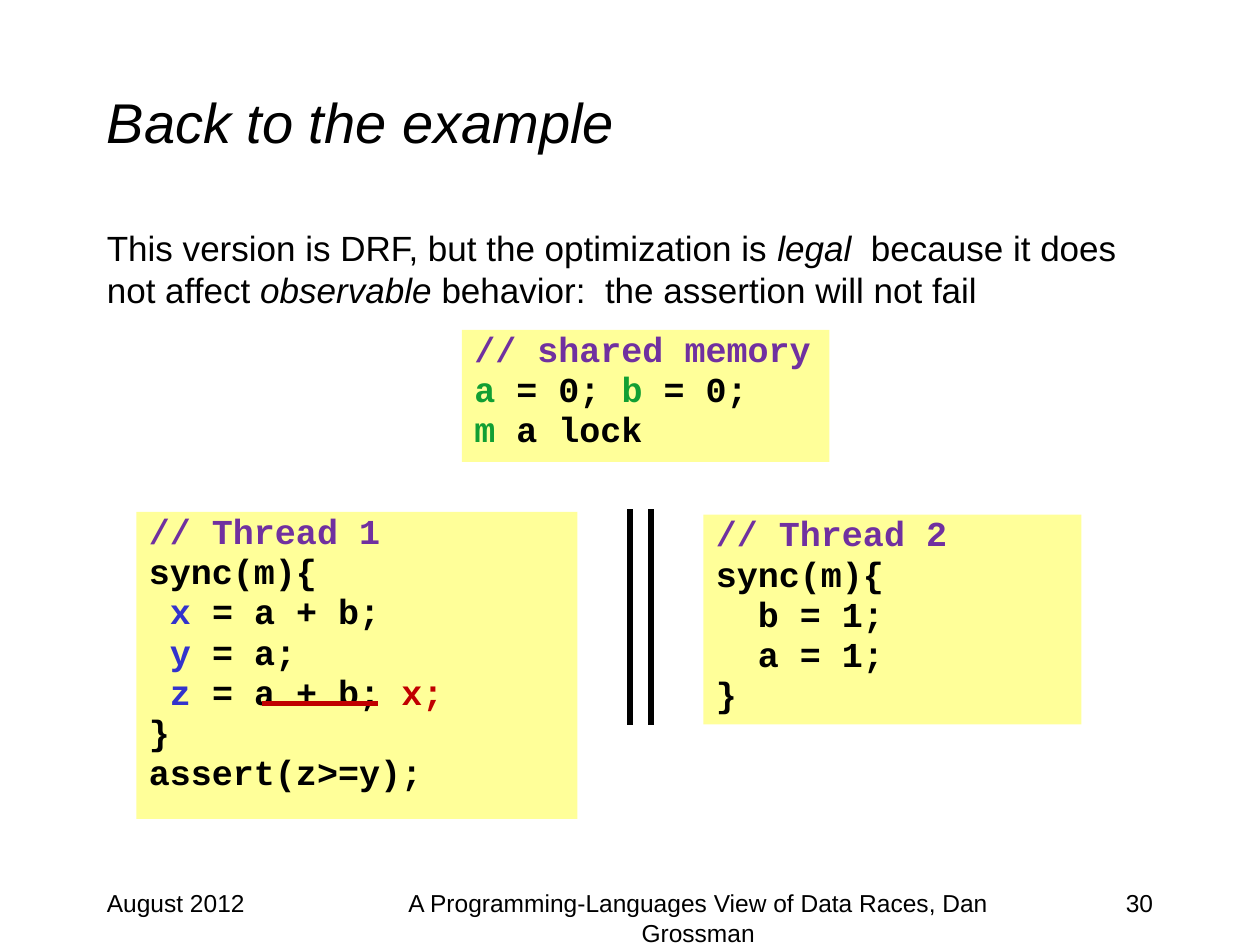
from lxml.etree import SubElement
from pptx import Presentation
from pptx.dml.color import RGBColor
from pptx.enum.shapes import MSO_CONNECTOR, MSO_SHAPE
from pptx.enum.text import MSO_ANCHOR as ANCHOR, PP_ALIGN as ALIGN
from pptx.oxml.ns import qn
from pptx.util import Pt

BLACK = RGBColor(0x00, 0x00, 0x00)
YELLOW = RGBColor(0xFF, 0xFF, 0x99)
PURPLE = RGBColor(0x70, 0x30, 0xA0)
GREEN = RGBColor(0x11, 0x9F, 0x33)
BLUE = RGBColor(0x33, 0x33, 0xCC)
RED = RGBColor(0xC0, 0x00, 0x00)


class Deck:
    text_font = "Arial"
    code_font = "Courier New"
    code_size = 20
    hanging = 27

    def __init__(self, width, height):
        self.prs = Presentation()
        self.prs.slide_width = Pt(width)
        self.prs.slide_height = Pt(height)
        self.s = self.prs.slides.add_slide(self.prs.slide_layouts[6])

    def text(self, box, runs, size, align=ALIGN.LEFT, anchor=ANCHOR.TOP, before=0):
        sp = self.s.shapes.add_textbox(*map(Pt, box))
        tf = sp.text_frame
        tf.word_wrap = True
        tf.vertical_anchor = anchor
        p = tf.paragraphs[0]
        p.alignment = align
        p.space_before = Pt(before)
        p.font.name = self.text_font
        p.font.size = Pt(size)
        p.font.color.rgb = BLACK
        for words, italic in runs:
            r = p.add_run()
            r.text = words
            r.font.italic = italic

    def code(self, box, lines):
        sp = self.s.shapes.add_shape(MSO_SHAPE.RECTANGLE, *map(Pt, box))
        sp.shadow.inherit = False
        sp.fill.solid()
        sp.fill.fore_color.rgb = YELLOW
        sp.line.fill.background()
        tf = sp.text_frame
        tf.word_wrap = True
        tf.vertical_anchor = ANCHOR.TOP
        for i, line in enumerate(lines):
            p = tf.add_paragraph() if i else tf.paragraphs[0]
            p.alignment = ALIGN.LEFT
            p.line_spacing = Pt(19)
            p.space_before = Pt(self.code_size * 0.2)
            p.font.name = self.code_font
            p.font.size = Pt(self.code_size)
            p.font.bold = True
            pPr = p._p.get_or_add_pPr()
            pPr.set("marL", str(Pt(self.hanging)))
            pPr.set("indent", str(-Pt(self.hanging)))
            for words, color in line:
                r = p.add_run()
                r.text = words
                r.font.color.rgb = color

    def line(self, start, end, color, width):
        ends = map(Pt, (*start, *end))
        cxn = self.s.shapes.add_connector(MSO_CONNECTOR.STRAIGHT, *ends)
        cxn.line.color.rgb = color
        cxn.line.width = Pt(width)
        SubElement(cxn._element.spPr, qn("a:effectLst"))

    def save(self):
        self.prs.save("out.pptx")


def main():
    deck = Deck(720, 540)

    deck.text((54, 24, 612, 90), [("Back to the example", True)], 32,
              anchor=ANCHOR.MIDDLE)
    deck.text((54, 126, 612, 60), [
        ("This version is DRF, but the optimization is ", False),
        ("legal", True),
        ("  because it does not affect ", False),
        ("observable", True),
        (" behavior:  the assertion will not fail", False),
    ], 20, before=4)

    for left, width, words, align in (
        (54, 150, "August 2012", ALIGN.LEFT),
        (516, 150, "30", ALIGN.RIGHT),
        (198, 402, "A Programming-Languages View of Data Races, Dan Grossman",
         ALIGN.CENTER),
    ):
        deck.text((left, 504, width, 36), [(words, False)], 14, align)

    deck.code((264, 188.5, 210, 75.5), [
        [("// shared memory", PURPLE)],
        [("a ", GREEN), ("= 0; ", BLACK), ("b ", GREEN), ("= 0;", BLACK)],
        [("m", GREEN), (" a lock", BLACK)],
    ])
    deck.code((78, 292.5, 252, 175.5), [
        [("// Thread 1", PURPLE)],
        [("sync(m){", BLACK)],
        [(" x ", BLUE), ("= a + b;", BLACK)],
        [(" y ", BLUE), ("= a;", BLACK)],
        [(" z ", BLUE), ("= a + b; ", BLACK), ("x;", RED)],
        [("}", BLACK)],
        [("assert(z>=y);", BLACK)],
    ])
    deck.code((402, 294, 216, 120), [
        [("// Thread 2", PURPLE)],
        *([(words, BLACK)] for words in ("sync(m){", "  b = 1;", "  a = 1;", "}")),
    ])

    for x in (360, 372):
        deck.line((x, 291), (x, 414), BLACK, 3.75)
    deck.line((150, 402), (216, 402), RED, 2.5)

    deck.save()


if __name__ == "__main__":
    main()
